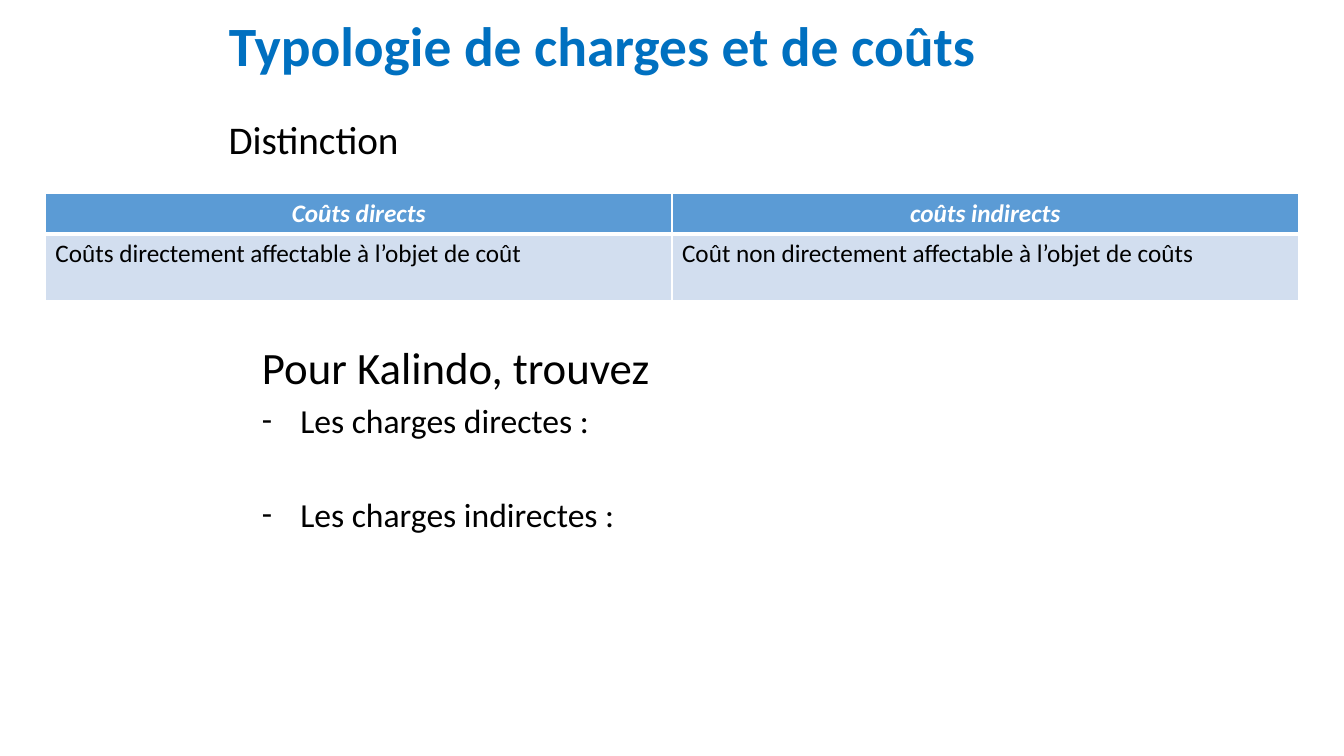
from lxml import etree
from pptx import Presentation
from pptx.dml.color import RGBColor
from pptx.enum.text import MSO_ANCHOR, MSO_AUTO_SIZE, PP_ALIGN
from pptx.oxml.ns import qn
from pptx.util import Inches, Pt

LEFT, CENTER, JUSTIFY = PP_ALIGN.LEFT, PP_ALIGN.CENTER, PP_ALIGN.JUSTIFY
MIDDLE, NO_FIT = MSO_ANCHOR.MIDDLE, MSO_AUTO_SIZE.NONE

TITLE = "Typologie de charges et de coûts"
SUBTITLE = "Distinction"
COSTS = [
    ("Coûts directs", "coûts indirects"),
    ("Coûts directement affectable à l’objet de coût",
     "Coût non directement affectable à l’objet de coûts"),
]
ROW_STYLES = [
    {"height": 0.4, "fill": "5B9BD5", "color": "FFFFFF", "strong": True,
     "align": CENTER, "bottom": 3},
    {"height": 0.66, "fill": "D2DEEF", "color": "000000", "strong": False,
     "align": JUSTIFY, "bottom": 1},
]
EXERCISE = [
    ("Pour Kalindo, trouvez", 32, 0, False),
    ("Les charges directes :", 24, 4.8, True),
    ("Les charges indirectes :", 24, 38, True),
]


def rgb(value):
    return RGBColor.from_string(value)


def style(para, size, color="000000", bold=False, italic=False, align=LEFT):
    para.alignment = align
    for span in para.runs:
        font = span.font
        font.name, font.size = "Calibri", Pt(size)
        font.bold, font.italic = bold, italic
        font.color.rgb = rgb(color)


def add_text_box(page, left, top, width, height):
    box = page.shapes.add_textbox(
        Inches(left), Inches(top), Inches(width), Inches(height))
    box.text_frame.word_wrap = True
    return box.text_frame


def add_dash(para):
    properties = para._p.get_or_add_pPr()
    properties.set("marL", str(Inches(0.38)))
    properties.set("indent", str(-Inches(0.38)))
    etree.SubElement(properties, qn("a:buFont"), typeface="Calibri")
    etree.SubElement(properties, qn("a:buChar"), char="-")


def add_borders(cell, bottom):
    properties = cell._tc.get_or_add_tcPr()
    for side, width in (("L", 1), ("R", 1), ("T", 1), ("B", bottom)):
        line = etree.SubElement(properties, qn("a:ln" + side), w=str(Pt(width)))
        fill = etree.SubElement(line, qn("a:solidFill"))
        etree.SubElement(fill, qn("a:srgbClr"), val="FFFFFF")


def add_title(page):
    title = page.shapes.title
    title.left, title.top = Inches(2.17), Inches(0.02)
    title.width, title.height = Inches(9), Inches(0.93)
    frame = title.text_frame
    frame.text = TITLE
    frame.word_wrap = True
    frame.auto_size = NO_FIT
    frame.vertical_anchor = MIDDLE
    frame.paragraphs[0].line_spacing = 0.9
    style(frame.paragraphs[0], 39.6, "0070C0", bold=True)


def add_subtitle(page):
    frame = add_text_box(page, 2.17, 1.15, 9, 4.95)
    frame.text = SUBTITLE
    frame.paragraphs[0].line_spacing = 0.9
    style(frame.paragraphs[0], 28)


def add_cost_table(page):
    height = sum(row["height"] for row in ROW_STYLES)
    table = page.shapes.add_table(
        len(COSTS), len(COSTS[0]),
        Inches(0.45), Inches(1.92), Inches(12.43), Inches(height)).table
    for row, texts, look in zip(table.rows, COSTS, ROW_STYLES):
        row.height = Inches(look["height"])
        for cell, text in zip(row.cells, texts):
            add_borders(cell, look["bottom"])
            cell.fill.solid()
            cell.fill.fore_color.rgb = rgb(look["fill"])
            cell.text_frame.text = text
            style(cell.text_frame.paragraphs[0], 18, look["color"],
                  look["strong"], look["strong"], look["align"])


def add_exercise(page):
    frame = add_text_box(page, 2.5, 3.32, 9, 4.1)
    frame.text = "\n".join(line[0] for line in EXERCISE)
    for para, (_, size, gap, dashed) in zip(frame.paragraphs, EXERCISE):
        style(para, size)
        para.space_before = Pt(gap)
        if dashed:
            add_dash(para)


def main():
    deck = Presentation()
    deck.slide_width, deck.slide_height = Inches(13.33), Inches(7.5)
    page = deck.slides.add_slide(deck.slide_layouts.get_by_name("Title Only"))
    add_title(page)
    add_subtitle(page)
    add_cost_table(page)
    add_exercise(page)
    deck.save("out.pptx")


if __name__ == "__main__":
    main()
